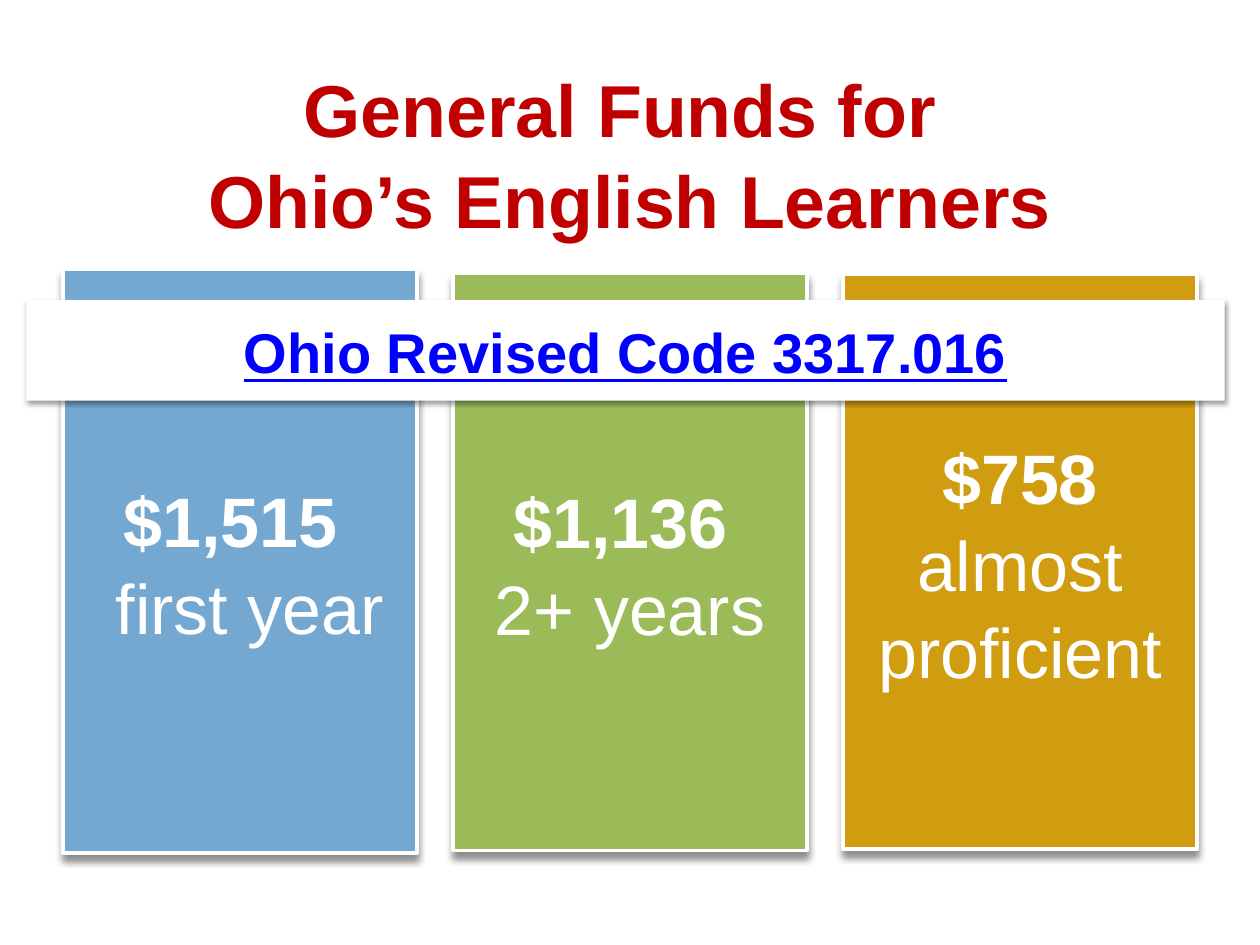
from lxml.etree import SubElement
from pptx import Presentation
from pptx.dml.color import RGBColor
from pptx.enum.shapes import MSO_SHAPE
from pptx.enum.text import MSO_ANCHOR, PP_ALIGN
from pptx.oxml.ns import qn
from pptx.util import Inches, Pt

CARDS = [
    ("$1,515 ", " first year", "74A8D1", 2.14, 4.63),
    ("$1,136 ", "2+ years", "9BBB59", 2.17, 4.58),
    ("$758", "almost proficient", "D19D10", 2.18, 4.56),
]


def rgb(value):
    """Turn a hex string into a colour."""
    return RGBColor.from_string(value)


def set_margins(tf, inches):
    """Give a text frame the same margin on all sides."""
    tf.margin_left = tf.margin_right = Inches(inches)
    tf.margin_top = tf.margin_bottom = Inches(inches)


def format_paragraph(p, size, color, bold, underline=None):
    """Centre a paragraph and format its runs."""
    p.alignment = PP_ALIGN.CENTER
    p.line_spacing = 1.04
    for r in p.runs:
        r.font.name = "Arial"
        r.font.size = Pt(size)
        r.font.bold = bold
        r.font.underline = underline
        r.font.color.rgb = rgb(color)


def add_shadow(sp, blur, distance, opacity):
    """Give a shape a black shadow that falls downwards."""
    sp.shadow.inherit = False
    effects = sp._element.spPr.find(qn("a:effectLst"))
    shadow = SubElement(effects, qn("a:outerShdw"), blurRad=str(Pt(blur)),
                        dist=str(Pt(distance)), dir="5400000", rotWithShape="0")
    color = SubElement(shadow, qn("a:srgbClr"), val="000000")
    SubElement(color, qn("a:alpha"), val=str(opacity * 1000))


def add_box(s, left, top, width, height, fill):
    """Add a filled rectangle with its text centred vertically."""
    sp = s.shapes.add_shape(MSO_SHAPE.RECTANGLE, Inches(left), Inches(top),
                            Inches(width), Inches(height))
    sp.fill.solid()
    sp.fill.fore_color.rgb = rgb(fill)
    sp.line.fill.background()
    sp.text_frame.word_wrap = True
    sp.text_frame.vertical_anchor = MSO_ANCHOR.MIDDLE
    return sp


def add_title(s, text):
    """Place and format the title placeholder."""
    title = s.shapes.title
    title.left, title.top = Inches(0.5), Inches(0.5)
    title.width, title.height = Inches(9), Inches(1.41)
    tf = title.text_frame
    tf.text = text
    tf.vertical_anchor = MSO_ANCHOR.MIDDLE
    set_margins(tf, 0)
    format_paragraph(tf.paragraphs[0], 42, "C00000", True)


def add_card(s, left, amount, group, fill, top, height):
    """Add a card with an amount above the group of learners."""
    sp = add_box(s, left, top, 2.81, height, fill)
    sp.line.color.rgb = rgb("FFFFFF")
    sp.line.width = Pt(2)
    add_shadow(sp, 4, 4, 43)
    tf = sp.text_frame
    set_margins(tf, 0.13)
    tf.text = f"{amount}\n{group}"
    for p, bold in zip(tf.paragraphs, (True, False)):
        format_paragraph(p, 40, "FFFFFF", bold)


def add_banner(s, text):
    """Add the white banner that crosses the cards."""
    sp = add_box(s, 0.21, 2.38, 9.51, 0.8, "FFFFFF")
    add_shadow(sp, 3.1, 1.6, 38)
    sp.text_frame.text = text
    format_paragraph(sp.text_frame.paragraphs[0], 32, "0000FF", True, True)


def main():
    """Build the slide and save it."""
    prs = Presentation()
    prs.slide_width, prs.slide_height = Inches(10), Inches(7.5)
    s = prs.slides.add_slide(prs.slide_layouts[5])
    add_title(s, "General Funds for \vOhio’s English Learners")
    for i, card in enumerate(CARDS):
        add_card(s, 0.5 + i * 3.095, *card)
    add_banner(s, "Ohio Revised Code 3317.016")
    prs.save("out.pptx")


if __name__ == "__main__":
    main()
